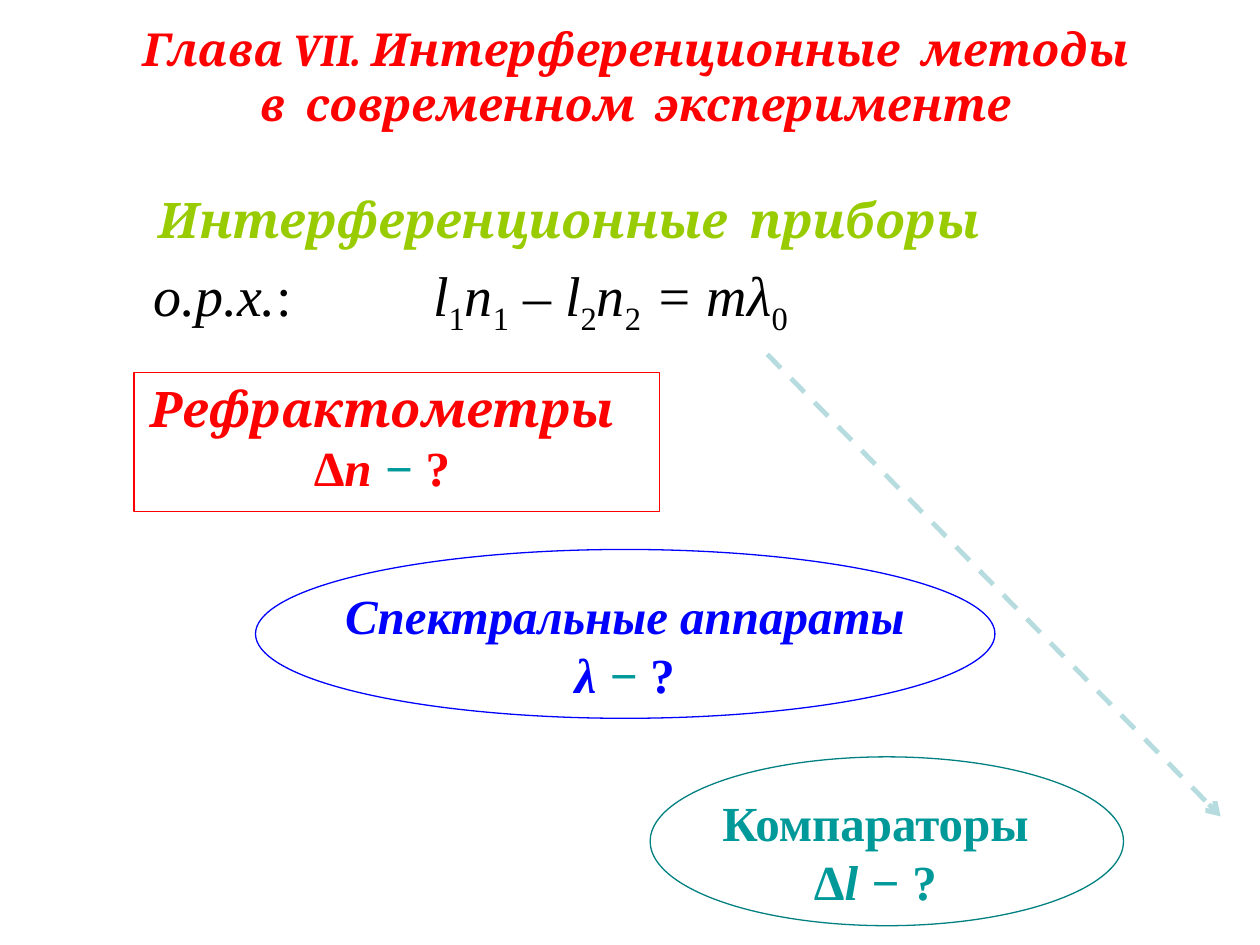
"""Build the chapter VII slide on interference methods and instruments."""
from lxml import etree
from pptx import Presentation
from pptx import util as u
from pptx.dml.color import RGBColor
from pptx.enum import dml, shapes, text
from pptx.oxml.ns import qn

SERIF, CAMBRIA = "Times New Roman", "Cambria"
RED, BLUE, TEAL, GREEN, BLACK = "FF0000", "0000FF", "009999", "99CC00", "000000"


def color(value):
    return RGBColor.from_string(value)


def write(frame, lines, size, bold=True, align=text.PP_ALIGN.CENTER):
    frame.word_wrap = True
    for index, line in enumerate(lines):
        paragraph = frame.add_paragraph() if index else frame.paragraphs[0]
        paragraph.alignment = align
        for wording, face, tint, italic, *baseline in line:
            run = paragraph.add_run()
            run.text = wording
            font = run.font
            font.name, font.size, font.bold, font.italic = face, u.Pt(size), bold, italic
            font.color.rgb = color(tint)
            if baseline:
                font._element.set("baseline", str(baseline[0]))


deck = Presentation()
deck.slide_width, deck.slide_height = u.Pt(720), u.Pt(540)
slide = deck.slides.add_slide(deck.slide_layouts[5])

chapter = slide.shapes.title
chapter.left, chapter.top, chapter.width, chapter.height = map(u.Pt, (73.5, 8, 579.5, 70.5))
chapter.text_frame.vertical_anchor = text.MSO_ANCHOR.MIDDLE
chapter.text_frame.margin_left = chapter.text_frame.margin_right = 0
write(chapter.text_frame, [
    [("Глава VII. Интерференционные  методы", CAMBRIA, RED, True)],
    [("в  современном  эксперименте", CAMBRIA, RED, True)],
], 26)

instruments = slide.shapes.add_textbox(*map(u.Pt, (76.5, 105, 497.5, 41)))
write(instruments.text_frame, [[("Интерференционные  приборы", CAMBRIA, GREEN, True)]], 28)

path_difference = slide.shapes.add_textbox(*map(u.Pt, (67.5, 145.5, 410.5, 46)))
path_difference.text_frame.margin_left = u.Pt(20)
formula = [("о.р.х.", SERIF, BLACK, True), (":\t", SERIF, BLACK, False)]
for symbol, subscript in (("l", "1"), ("n", "1"), (" – l", "2"), ("n", "2"), (" = mλ", "0")):
    formula += [(symbol, SERIF, BLACK, True), (subscript, SERIF, BLACK, False, -25000)]
write(path_difference.text_frame, [formula], 32, False, text.PP_ALIGN.LEFT)
tabs = etree.SubElement(path_difference.text_frame.paragraphs[0]._p.get_or_add_pPr(), qn("a:tabLst"))
etree.SubElement(tabs, qn("a:tab"), pos=str(u.Pt(160)), algn="l")

OVAL, BOX = shapes.MSO_SHAPE.OVAL, shapes.MSO_SHAPE.RECTANGLE
devices = [
    (OVAL, "008080", (371.5, 432.5, 270.5, 96.5), (392.5, 449.5, 215.5, 74),
     [("Компараторы", SERIF, TEAL, False)],
     [("Δ", SERIF, TEAL, False), ("l − ", SERIF, TEAL, True), ("?", SERIF, TEAL, False)]),
    (OVAL, BLUE, (146, 314, 422.5, 96.5), (162.5, 331, 389, 74),
     [("Спектральные аппараты", SERIF, BLUE, True)],
     [("λ ", SERIF, BLUE, True), ("− ", SERIF, TEAL, True), ("?", SERIF, BLUE, False)]),
    (BOX, RED, (76.5, 213, 300.5, 79.5), (76.5, 213, 283.5, 74),
     [("Рефрактометры", CAMBRIA, RED, True)],
     [("Δ", SERIF, RED, False), ("n ", SERIF, RED, True), ("− ", SERIF, TEAL, True),
      ("?", SERIF, RED, False)]),
]
for outline, border, frame_area, label_area, device, measured in devices:
    group = slide.shapes.add_group_shape()
    label = group.shapes.add_textbox(*map(u.Pt, label_area))
    write(label.text_frame, [device, measured], 28)
    border_shape = group.shapes.add_shape(outline, *map(u.Pt, frame_area))
    border_shape.shadow.inherit = False
    border_shape.fill.background()
    border_shape.line.color.rgb = color(border)
    border_shape.line.width = u.Pt(0.75)

direction = slide.shapes.add_connector(
    shapes.MSO_CONNECTOR.STRAIGHT, *map(u.Pt, (438.5, 202.5, 697.5, 466.5)))
direction.line.color.rgb = color("B6DCDF")
direction.line.width = u.Pt(2.75)
direction.line.dash_style = dml.MSO_LINE.DASH
etree.SubElement(direction.line._get_or_add_ln(), qn("a:tailEnd"), type="arrow")
etree.SubElement(direction._element.spPr, qn("a:effectLst"))

deck.save("out.pptx")
